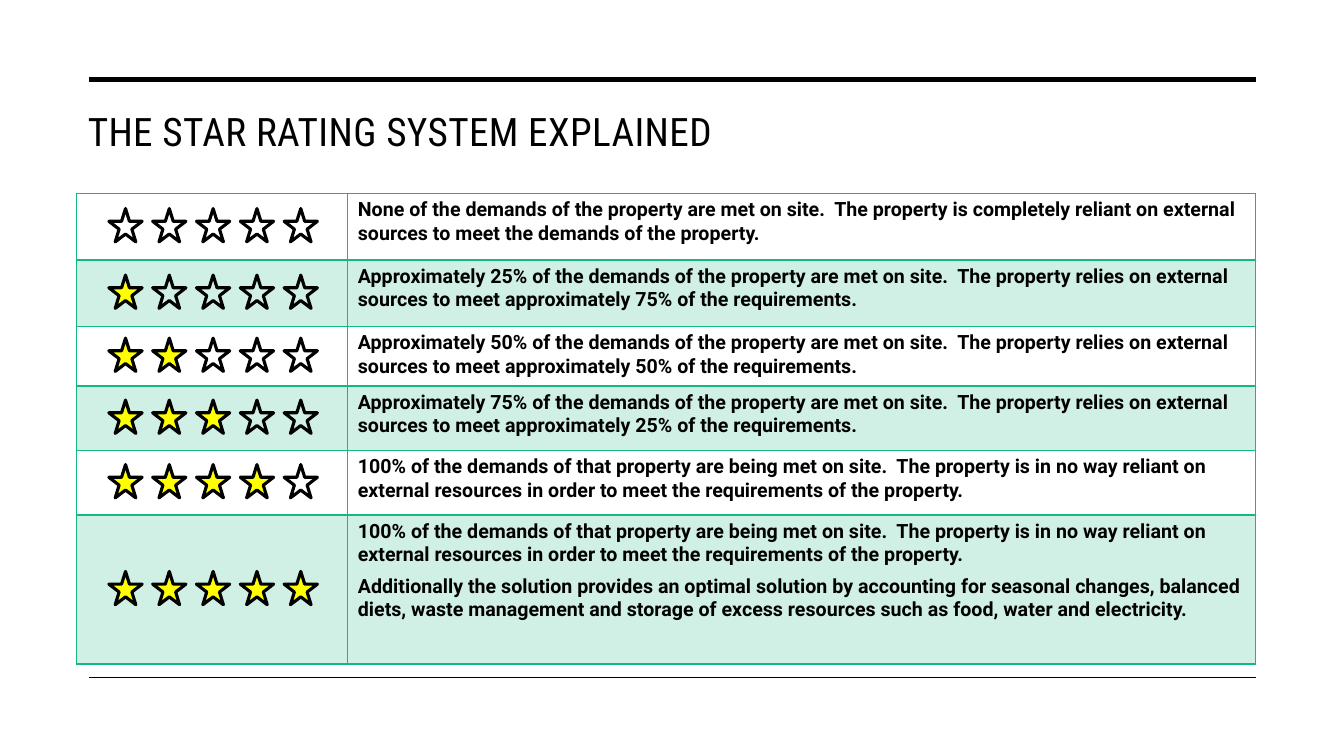
from dataclasses import dataclass

from lxml import etree
from pptx import Presentation
from pptx import util as u
from pptx.dml.color import RGBColor
from pptx.enum import shapes, text
from pptx.oxml import ns

WIDTH, HEIGHT = u.Inches(13.33), u.Inches(7.5)


@dataclass(frozen=True)
class Theme:
    ink: str = "000000"
    green: str = "14B785"
    star: str = "FFFF00"
    band_opacity: int = 20
    title_font: str = "Roboto Condensed"
    body_font: str = "Roboto"
    title_size: int = 28
    body_size: int = 14


THEME = Theme()

RULE_LEFT, RULE_RIGHT = 6.6, 93.47
TABLE_LEFT, TABLE_TOP = 5.7, 25.6
COLUMNS = [20.18, 67.52]
STARS_LEFT, STAR_PITCH, STAR_WIDTH = 8.1, 3.26, 2.48
STAR_COUNT = 5
STAR_LIFT = 0.2

PARTIAL = ("Approximately {}% of the demands of the property are met on site.  The property "
           "relies on external sources to meet approximately {}% of the requirements.")
FULL = ("100% of the demands of that property are being met on site.  The property is in no way "
        "reliant on external resources in order to meet the requirements of the property.")

# Row height as a percentage of the slide, then the row's paragraphs; row number = stars filled
RATINGS = [
    (8.8, ["None of the demands of the property are met on site.  The property is completely "
           "reliant on external sources to meet the demands of the property."]),
    (8.8, [PARTIAL.format(25, 75)]),
    (7.87, [PARTIAL.format(50, 50)]),
    (8.53, [PARTIAL.format(75, 25)]),
    (8.53, [FULL]),
    (19.73, [FULL,
             "Additionally the solution provides an optimal solution by accounting for seasonal "
             "changes, balanced diets, waste management and storage of excess resources such as "
             "food, water and electricity."]),
]


def across(percent):
    return round(WIDTH * percent / 100)


def down(percent):
    return round(HEIGHT * percent / 100)


def color(value):
    return RGBColor.from_string(value)


def style(font, name, size, bold=False):
    font.name, font.size, font.bold = name, u.Pt(size), bold
    font.color.rgb = color(THEME.ink)


def add_rule(page, top, weight):
    rule = page.shapes.add_connector(shapes.MSO_CONNECTOR.STRAIGHT, across(RULE_LEFT), down(top),
                                     across(RULE_RIGHT), down(top))
    rule.line.color.rgb = color(THEME.ink)
    rule.line.width = u.Pt(weight)
    etree.SubElement(rule._element.spPr, ns.qn("a:effectLst"))


def set_title(page, words):
    title = page.shapes.title
    title.left, title.top = across(5.78), down(13.47)
    title.width, title.height = across(87.7), down(20)
    frame = title.text_frame
    frame.text = words
    frame.word_wrap = True
    frame.auto_size = text.MSO_AUTO_SIZE.NONE
    frame.vertical_anchor = text.MSO_ANCHOR.TOP
    para = frame.paragraphs[0]
    para.alignment = text.PP_ALIGN.LEFT
    para.line_spacing = 1.0
    style(para.font, THEME.title_font, THEME.title_size)
    para.runs[0].font._element.set("spc", "30")


def set_borders(cell, top, bottom):
    """Draw the four green edges of a cell; top and bottom are weights in points."""
    properties = cell._tc.get_or_add_tcPr()
    for edge, weight in (("lnL", 1), ("lnR", 1), ("lnT", top), ("lnB", bottom)):
        line = etree.SubElement(properties, ns.qn(f"a:{edge}"), w=str(u.Pt(weight)))
        fill = etree.SubElement(line, ns.qn("a:solidFill"))
        etree.SubElement(fill, ns.qn("a:srgbClr"), val=THEME.green)


def set_band(cell, shaded):
    if not shaded:
        cell.fill.background()
        return
    cell.fill.solid()
    cell.fill.fore_color.rgb = color(THEME.green)
    tint = cell._tc.tcPr.find(".//" + ns.qn("a:solidFill") + "[last()]/../" +
                              ns.qn("a:solidFill") + "/" + ns.qn("a:srgbClr"))
    for tint in cell._tc.tcPr.findall(ns.qn("a:solidFill") + "/" + ns.qn("a:srgbClr")):
        etree.SubElement(tint, ns.qn("a:alpha"), val=str(THEME.band_opacity * 1000))


def write_cell(cell, paragraphs):
    frame = cell.text_frame
    frame.text = "\n".join(paragraphs)
    for para in frame.paragraphs:
        style(para.font, THEME.body_font, THEME.body_size, bold=True)
        if len(paragraphs) > 1:
            para.space_after = u.Pt(6)


def add_rating_table(page):
    heights = [height for height, _ in RATINGS]
    table = page.shapes.add_table(len(RATINGS), len(COLUMNS), across(TABLE_LEFT), down(TABLE_TOP),
                                  across(sum(COLUMNS)), down(sum(heights))).table
    table.first_row = table.horz_banding = False
    for column, width in zip(table.columns, COLUMNS):
        column.width = across(width)
    for index, (height, paragraphs) in enumerate(RATINGS):
        table.rows[index].height = down(height)
        for cell in table.rows[index].cells:
            set_borders(cell, top=2 if index == 1 else 1, bottom=2 if index == 0 else 1)
            set_band(cell, shaded=index % 2 == 1)
        write_cell(table.cell(index, 1), paragraphs)


def add_stars(page, middle, filled):
    """Add one group of five stars centred on a height, the first few of them filled."""
    group = page.shapes.add_group_shape()
    size = across(STAR_WIDTH)
    for place in range(STAR_COUNT):
        star = group.shapes.add_shape(shapes.MSO_SHAPE.STAR_5_POINT,
                                      across(STARS_LEFT + place * STAR_PITCH),
                                      down(middle - STAR_LIFT) - size // 2, size, size)
        star.shadow.inherit = False
        star.line.color.rgb = color(THEME.ink)
        star.line.width = u.Pt(2.25)
        if place < filled:
            star.fill.solid()
            star.fill.fore_color.rgb = color(THEME.star)
        else:
            star.fill.background()


def main():
    deck = Presentation()
    deck.slide_width, deck.slide_height = WIDTH, HEIGHT
    page = deck.slides.add_slide(deck.slide_layouts.get_by_name("Title Only"))
    add_rule(page, top=10.53, weight=3.5)
    add_rule(page, top=89.6, weight=1)
    set_title(page, "THE STAR RATING SYSTEM EXPLAINED")
    add_rating_table(page)
    row_top = TABLE_TOP
    for filled, (height, _) in enumerate(RATINGS):
        add_stars(page, row_top + height / 2, filled)
        row_top += height
    deck.save("out.pptx")


if __name__ == "__main__":
    main()
